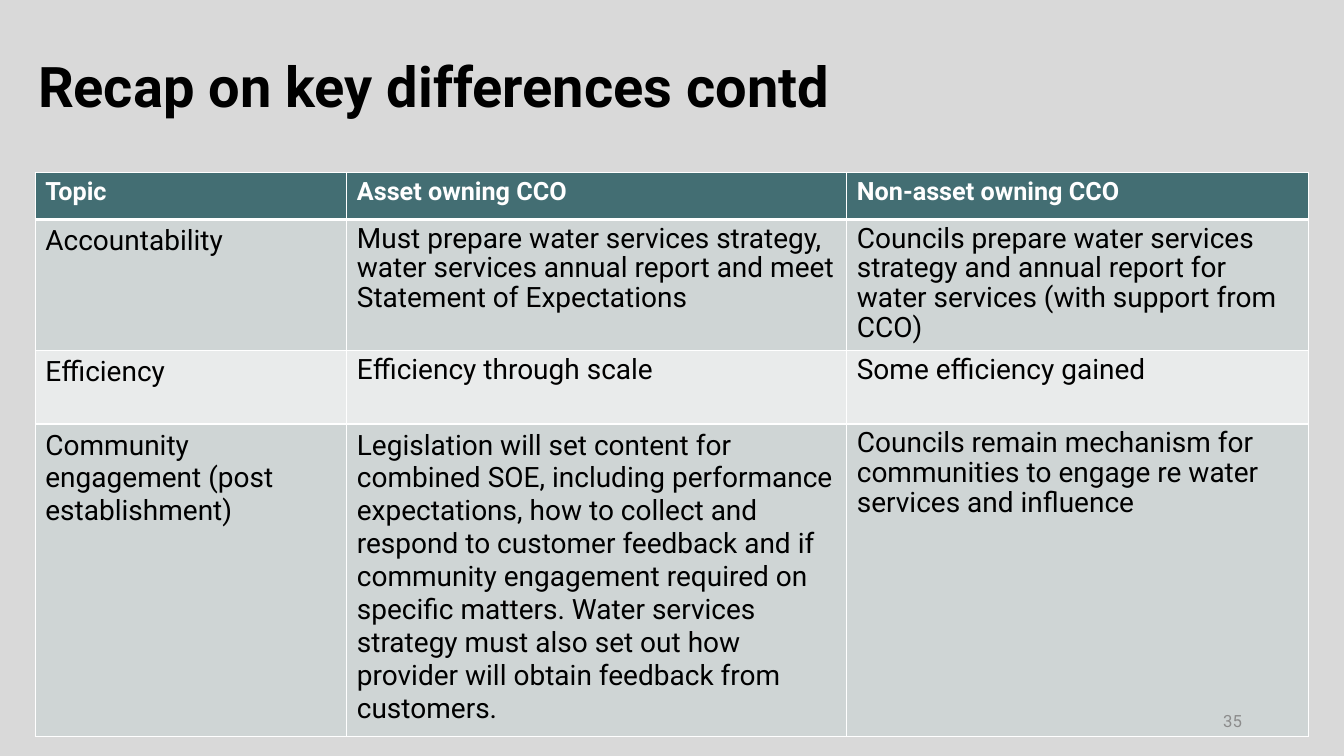
from lxml import etree
from pptx import Presentation
from pptx.dml.color import RGBColor
from pptx.enum.text import MSO_ANCHOR, PP_ALIGN
from pptx.oxml.ns import qn
from pptx.util import Cm, Pt

MIDDLE = MSO_ANCHOR.MIDDLE
RIGHT = PP_ALIGN.RIGHT

BACKGROUND = RGBColor(0xD9, 0xD9, 0xD9)
BLACK = RGBColor(0, 0, 0)
WHITE = RGBColor(0xFF, 0xFF, 0xFF)
GREY = RGBColor(0x8C, 0x8C, 0x8C)
TEAL = RGBColor(0x43, 0x6E, 0x73)
BANDS = (RGBColor(0xE9, 0xEB, 0xEB), RGBColor(0xCF, 0xD5, 0xD5))

FONT = "Roboto"
COLUMN_WIDTHS = (7.85, 12.6, 11.63)
ROW_HEIGHTS = (1.19, 3.25, 1.85, 7.7)
DIFFERENCES = (
    ("Topic", "Asset owning CCO", "Non-asset owning CCO"),
    ("Accountability",
     "Must prepare water services strategy, water services annual report "
     "and meet Statement of Expectations",
     "Councils prepare water services strategy and annual report for water "
     "services (with support from CCO)"),
    ("Efficiency", "Efficiency through scale", "Some efficiency gained"),
    ("Community engagement (post establishment)",
     "Legislation will set content for combined SOE, including performance "
     "expectations, how to collect and respond to customer feedback and if "
     "community engagement required on specific matters. Water services "
     "strategy must also set out how provider will obtain feedback from "
     "customers.",
     "Councils remain mechanism for communities to engage re water services "
     "and influence"),
)
# Cells set in normal line spacing although they are not topics
LOOSE_CELLS = {(3, 1)}


def write(frame, text, size, color=BLACK, bold=False, align=None,
          line_spacing=None, space_before=None):
    paragraph = frame.paragraphs[0]
    paragraph.alignment = align
    paragraph.line_spacing = line_spacing
    if space_before is not None:
        paragraph.space_before = Pt(space_before)
    run = paragraph.add_run()
    run.text = text
    run.font.name = FONT
    run.font.size = Pt(size)
    run.font.bold = bold
    run.font.color.rgb = color


def add_text(slide, box, text, **text_format):
    frame = slide.shapes.add_textbox(*map(Cm, box)).text_frame
    frame.word_wrap = True
    frame.vertical_anchor = MIDDLE
    write(frame, text, **text_format)


def set_borders(cell, widths):
    properties = cell._tc.get_or_add_tcPr()
    for side, width in widths.items():
        line = etree.SubElement(properties, qn(f"a:ln{side}"), w=str(Pt(width)))
        fill = etree.SubElement(line, qn("a:solidFill"))
        etree.SubElement(fill, qn("a:srgbClr"), val=str(WHITE))


def add_differences_table(slide, left, top):
    table = slide.shapes.add_table(
        len(ROW_HEIGHTS), len(COLUMN_WIDTHS), Cm(left), Cm(top),
        Cm(sum(COLUMN_WIDTHS)), Cm(sum(ROW_HEIGHTS))).table
    for column, width in zip(table.columns, COLUMN_WIDTHS):
        column.width = Cm(width)
    for row, height in zip(table.rows, ROW_HEIGHTS):
        row.height = Cm(height)

    for r, entries in enumerate(DIFFERENCES):
        header = r == 0
        for c, entry in enumerate(entries):
            cell = table.cell(r, c)
            set_borders(cell, {"L": 1, "R": 1, "T": 3 if r == 1 else 1,
                               "B": 3 if header else 1})
            cell.fill.solid()
            cell.fill.fore_color.rgb = TEAL if header else BANDS[r % 2]
            if header:
                write(cell.text_frame, entry, size=18, color=WHITE, bold=True)
            elif c == 0 or (r, c) in LOOSE_CELLS:
                write(cell.text_frame, entry, size=20)
            else:
                write(cell.text_frame, entry, size=20,
                      line_spacing=0.9, space_before=10)


def main():
    deck = Presentation()
    deck.slide_width, deck.slide_height = Cm(33.87), Cm(19.05)
    slide = deck.slides.add_slide(deck.slide_layouts[6])
    slide.background.fill.solid()
    slide.background.fill.fore_color.rgb = BACKGROUND

    # Title
    add_text(slide, (0.71, 0.41, 29.21, 3.68), "Recap on key differences contd",
             size=40, bold=True, line_spacing=0.9)
    # Comparison of the two kinds of CCO
    add_differences_table(slide, 0.89, 4.34)
    # Page number
    add_text(slide, (23.93, 17.65, 7.62, 1.02), "35",
             size=12, color=GREY, align=RIGHT)

    deck.save("out.pptx")


if __name__ == "__main__":
    main()
